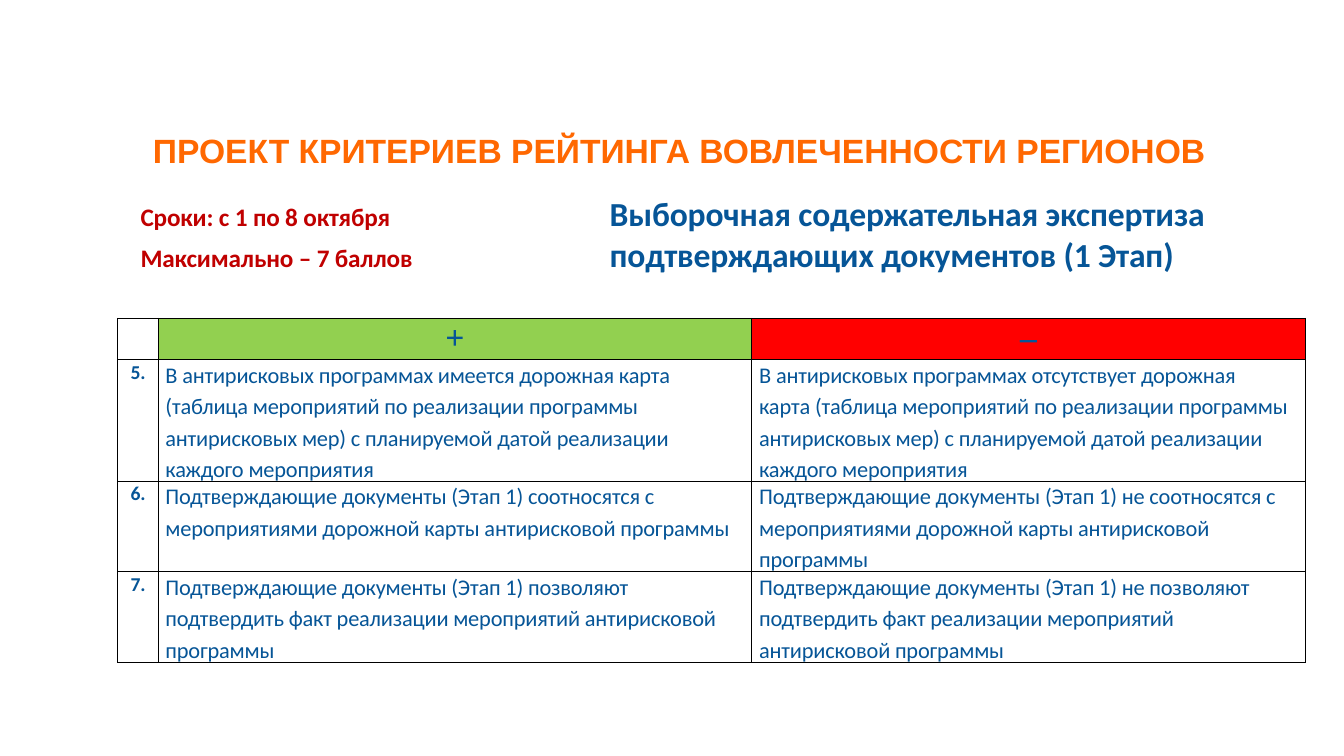
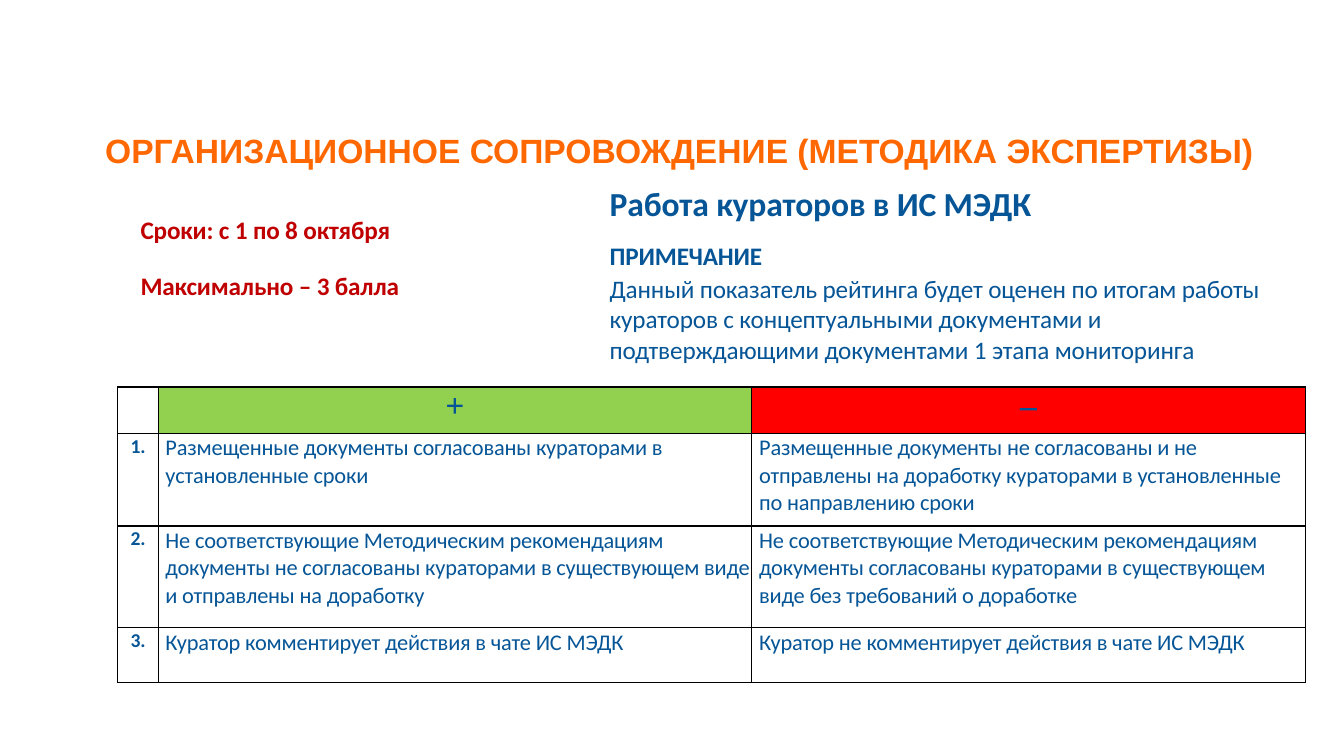
from pptx import Presentation
from pptx.util import Pt
from pptx.dml.color import RGBColor
from pptx.enum.text import MSO_ANCHOR as Anchor, PP_ALIGN as Align
from lxml.etree import SubElement
from pptx.oxml.ns import qn

ORANGE = RGBColor(0xFF, 0x68, 0x01)
BLUE = RGBColor(0x06, 0x55, 0x97)
DARK = RGBColor(0xC0, 0x00, 0x00)
GREEN = RGBColor(0x92, 0xD0, 0x50)
RED = RGBColor(0xFF, 0x00, 0x00)

LEFT, MID = 100.4, 428.4
COLS = [28.8, 424.1, 395.3]
HEADS = [("+", GREEN), ("–", RED)]

# Content: a line break in a cell starts a new paragraph
SLIDES = [
    {
        "title": "ПРОЕКТ КРИТЕРИЕВ РЕЙТИНГА ВОВЛЕЧЕННОСТИ РЕГИОНОВ",
        "terms": [(143.3, "Сроки: с 1 по 8 октября"),
                  (172.1, "Максимально – 7 баллов")],
        "head": (134.6, "Выборочная содержательная экспертиза "
                        "подтверждающих документов (1 Этап)"),
        "note": None,
        "top": 227.5, "pad": 1.4, "lead": 1.15,
        "heights": [24.5, 65.5, 49.7, 49.7],
        "rows": [
            ("5.",
             "В антирисковых программах имеется дорожная карта\n"
             "(таблица мероприятий по реализации программы\n"
             "антирисковых мер) с планируемой датой реализации каждого мероприятия",
             "В антирисковых программах отсутствует дорожная\n"
             "карта (таблица мероприятий по реализации программы\n"
             "антирисковых мер) с планируемой датой реализации каждого мероприятия"),
            ("6.",
             "Подтверждающие документы (Этап 1) соотносятся с\n"
             "мероприятиями дорожной карты антирисковой программы",
             "Подтверждающие документы (Этап 1) не соотносятся с\n"
             "мероприятиями дорожной карты антирисковой программы"),
            ("7.",
             "Подтверждающие документы (Этап 1) позволяют\n"
             "подтвердить факт реализации мероприятий антирисковой\n"
             "программы",
             "Подтверждающие документы (Этап 1) не позволяют\n"
             "подтвердить факт реализации мероприятий\n"
             "антирисковой программы"),
        ],
    },
    {
        "title": "ОРГАНИЗАЦИОННОЕ СОПРОВОЖДЕНИЕ (МЕТОДИКА ЭКСПЕРТИЗЫ)",
        "terms": [(152.6, "Сроки: с 1 по 8 октября"),
                  (192.2, "Максимально – 3 балла")],
        "head": (127.4, "Работа кураторов в ИС МЭДК"),
        "note": ("ПРИМЕЧАНИЕ",
                 "Данный показатель рейтинга будет оценен по итогам работы "
                 "кураторов с концептуальными документами и "
                 "подтверждающими документами 1 этапа мониторинга"),
        "top": 276.5, "pad": 0.7, "lead": 1,
        "heights": [33.1, 66.2, 72.7, 38.9],
        "rows": [
            ("1.",
             "Размещенные документы согласованы кураторами в\n"
             "установленные сроки",
             "Размещенные документы не согласованы и не\n"
             "отправлены на доработку кураторами в установленные "
             "по направлению сроки"),
            ("2.",
             "Не соответствующие Методическим рекомендациям\n"
             "документы не согласованы кураторами в существующем "
             "виде и отправлены на доработку",
             "Не соответствующие Методическим рекомендациям\n"
             "документы согласованы кураторами в существующем "
             "виде без требований о доработке"),
            ("3.",
             "Куратор комментирует действия в чате ИС МЭДК",
             "Куратор не комментирует действия в чате ИС МЭДК"),
        ],
    },
]


def style(par, size, color, bold=True, face="Calibri", align=Align.LEFT):
    par.alignment = align
    font = par.font
    font.size, font.bold, font.name = Pt(size), bold, face
    font.color.rgb = color
    if face == "Calibri":  # slightly tight letter spacing
        par._p.get_or_add_pPr().get_or_add_defRPr().set("spc", "-10")


def add_text(slide, box, text, pads=(7.2, 3.6, 7.2, 3.6)):
    frame = slide.shapes.add_textbox(*map(Pt, box)).text_frame
    frame.word_wrap = True
    (frame.margin_left, frame.margin_top,
     frame.margin_right, frame.margin_bottom) = map(Pt, pads)
    frame.text = text
    return frame


def add_lines(cell):
    props = cell._tc.get_or_add_tcPr()
    for side in ("lnL", "lnR", "lnT", "lnB"):
        line = SubElement(props, qn(f"a:{side}"), w=str(Pt(1)))
        fill = SubElement(line, qn("a:solidFill"))
        SubElement(fill, qn("a:srgbClr"), val="000000")


def fill_cell(cell, text, pad, left=0, lead=1, fill=None, **look):
    cell.margin_left, cell.margin_top = Pt(left), Pt(pad)
    cell.margin_right = cell.margin_bottom = 0
    add_lines(cell)
    if fill is None:
        cell.fill.background()
    else:
        cell.fill.solid()
        cell.fill.fore_color.rgb = fill
    cell.text = text
    for i, par in enumerate(cell.text_frame.paragraphs):
        if i:
            par.line_spacing = lead
        style(par, color=BLUE, **look)


def add_grid(slide, data):
    heights = data["heights"]
    box = (84.2, data["top"], sum(COLS), sum(heights))
    table = slide.shapes.add_table(
        len(heights), len(COLS), *map(Pt, box)).table
    table.first_row = table.horz_banding = False
    for col, width in zip(table.columns, COLS):
        col.width = Pt(width)
    for row, height in zip(table.rows, heights):
        row.height = Pt(height)

    # Header row
    fill_cell(table.cell(0, 0), "", 0, size=14)
    for c, (sign, color) in enumerate(HEADS, 1):
        fill_cell(table.cell(0, c), sign, 0.7, fill=color, size=24,
                  face="Times New Roman", align=Align.CENTER)

    # Criteria
    for r, (num, *texts) in enumerate(data["rows"], 1):
        fill_cell(table.cell(r, 0), num, 0.7, size=14, align=Align.CENTER)
        for c, text in enumerate(texts, 1):
            fill_cell(table.cell(r, c), text, data["pad"], left=5.2,
                      lead=data["lead"], size=16, bold=False)


def add_slide(deck, data):
    slide = deck.slides.add_slide(deck.slide_layouts[6])

    # Title
    frame = add_text(slide, (36.7, 36, 897.1, 89.3), data["title"])
    frame.vertical_anchor = Anchor.BOTTOM
    par = frame.paragraphs[0]
    par.line_spacing = 0.9
    style(par, 24, ORANGE, face="Arial", align=Align.CENTER)

    # Dates and top score
    for top, text in data["terms"]:
        frame = add_text(slide, (LEFT, top, 199, 23.8), text, (0, 0.7, 0, 0))
        style(frame.paragraphs[0], 18, DARK)

    # Subject and note
    top, text = data["head"]
    frame = add_text(slide, (MID, top, 480.2, 36), text)
    style(frame.paragraphs[0], 24, BLUE)
    if data["note"]:
        frame = add_text(slide, (MID, 169.2, 488.2, 91.4),
                         "\n".join(data["note"]), (7.2, 2.2, 0, 0))
        label, body = frame.paragraphs
        style(label, 18, BLUE)
        body.space_before = Pt(2.4)
        style(body, 18, BLUE, bold=False)

    add_grid(slide, data)


def main():
    deck = Presentation()
    deck.slide_width, deck.slide_height = Pt(960), Pt(540)
    for data in SLIDES:
        add_slide(deck, data)
    deck.save("out.pptx")


if __name__ == "__main__":
    main()
